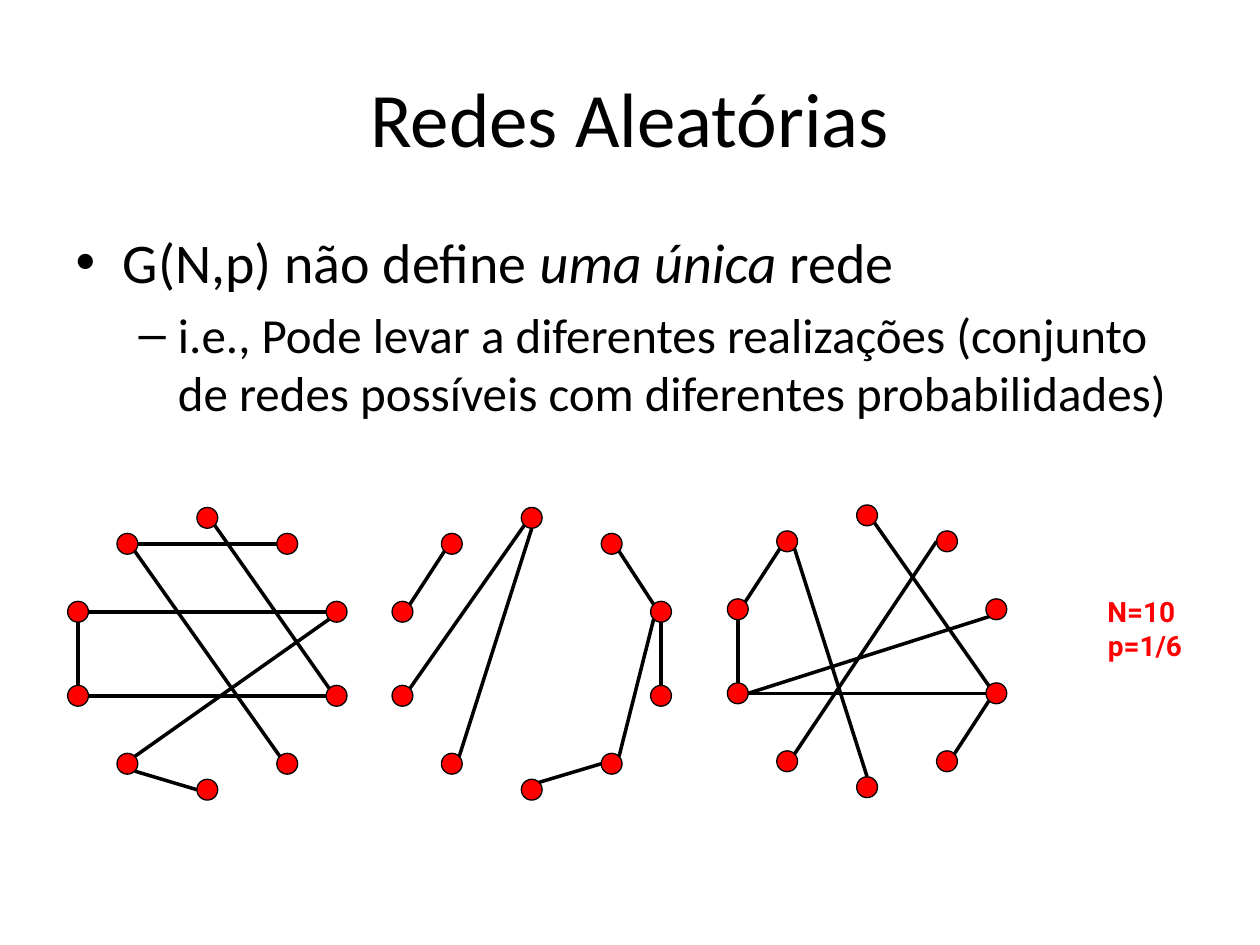
from math import sin, cos, radians
from pptx import Presentation
from pptx.dml.color import RGBColor
from pptx.enum.shapes import MSO_CONNECTOR as Line, MSO_SHAPE as Kind
from pptx.enum.text import MSO_ANCHOR as Anchor, MSO_AUTO_SIZE as Fit, PP_ALIGN as Align
from pptx.oxml.ns import qn
from pptx.util import Cm, Pt
from lxml.etree import SubElement as Sub

BLACK = RGBColor(0, 0, 0)
RED = RGBColor(255, 0, 0)


def put(par, text, size, font="Calibri", color=BLACK, bold=None, ital=None):
    run = par.add_run()
    run.text = text
    face = run.font
    face.name, face.size, face.bold, face.italic = font, Pt(size), bold, ital
    face.color.rgb = color


def polar(mid, rad, deg):
    turn = radians(deg)
    return mid[0] + rad * sin(turn), mid[1] - rad * cos(turn)


deck = Presentation()
deck.slide_width, deck.slide_height = Cm(25.4), Cm(19.05)
slide = deck.slides.add_slide(deck.slide_layouts[1])

title, body = slide.placeholders
for item, top, high in ((title, 0.76, 3.18), (body, 4.45, 12.57)):
    item.left, item.top, item.width, item.height = Cm(1.27), Cm(top), Cm(22.86), Cm(high)

frame = title.text_frame
frame.vertical_anchor = Anchor.MIDDLE
head = frame.paragraphs[0]
head.alignment = Align.CENTER
put(head, "Redes Aleatórias", 44)

frame = body.text_frame
main = frame.paragraphs[0]
put(main, "G(N,p) não define ", 32)
put(main, "uma única", 32, ital=True)
put(main, " rede", 32)
sub = frame.add_paragraph()
sub.level = 1
put(sub, "i.e., Pode levar a diferentes realizações (conjunto de redes "
         "possíveis com diferentes probabilidades)", 28)

COUNT = 10
RING = 2.74
DOT = 0.21
N, NE, E, SE, S, SW, W, NW = range(0, 360, 45)
nets = [
    ((4.18, 13.18), [(6, SE, 5, W), (8, S, 7, N), (9, E, 1, W), (6, NE, 2, SW),
                     (4, NW, 9, SE), (3, NW, 0, SE), (7, E, 3, W), (8, E, 2, W)]),
    ((10.72, 13.18), [(2, NW, 1, SE), (2, S, 3, N), (7, NE, 0, SW), (9, SW, 8, NE),
                      (4, NE, 2, SW), (0, S, 6, NE), (5, NE, 4, W)]),
    ((17.48, 13.13), [(9, SW, 8, NE), (8, S, 7, N), (7, E, 3, W), (6, NE, 1, W),
                      (7, E, 2, SW), (5, N, 9, SE), (3, NW, 0, SE), (4, NE, 3, SW)]),
]

for mid, edges in nets:
    group = slide.shapes.add_group_shape().shapes
    nodes = [polar(mid, RING, 360 / COUNT * i) for i in range(COUNT)]
    for x, y in nodes:
        dot = group.add_shape(Kind.OVAL, Cm(x - DOT), Cm(y - DOT), Cm(2 * DOT), Cm(2 * DOT))
        dot.shadow.inherit = False
        dot.fill.solid()
        dot.fill.fore_color.rgb = RED
        dot.line.color.rgb = BLACK
        dot.line.width = Pt(0.75)
    for a, out, b, into in edges:
        ends = polar(nodes[a], DOT, out) + polar(nodes[b], DOT, into)
        edge = group.add_connector(Line.STRAIGHT, *[Cm(v) for v in ends])
        edge.line.color.rgb = BLACK
        edge.line.width = Pt(2)
        Sub(edge._element.spPr, qn("a:effectLst"))

note = slide.shapes.add_textbox(Cm(22.23), Cm(11.99), Cm(1.68), Cm(1.37))
frame = note.text_frame
frame.word_wrap = True
frame.auto_size = Fit.SHAPE_TO_FIT_TEXT
frame.margin_left = frame.margin_top = frame.margin_bottom = 0
frame.margin_right = Cm(0.08)
for i, text in enumerate(("N=10 ", "p=1/6")):
    par = frame.add_paragraph() if i else frame.paragraphs[0]
    par.alignment = Align.RIGHT
    par._p.get_or_add_pPr().set("marL", str(Cm(0.08)))
    put(par, text, 16, "Roboto", RED, bold=True)

deck.save("out.pptx")
